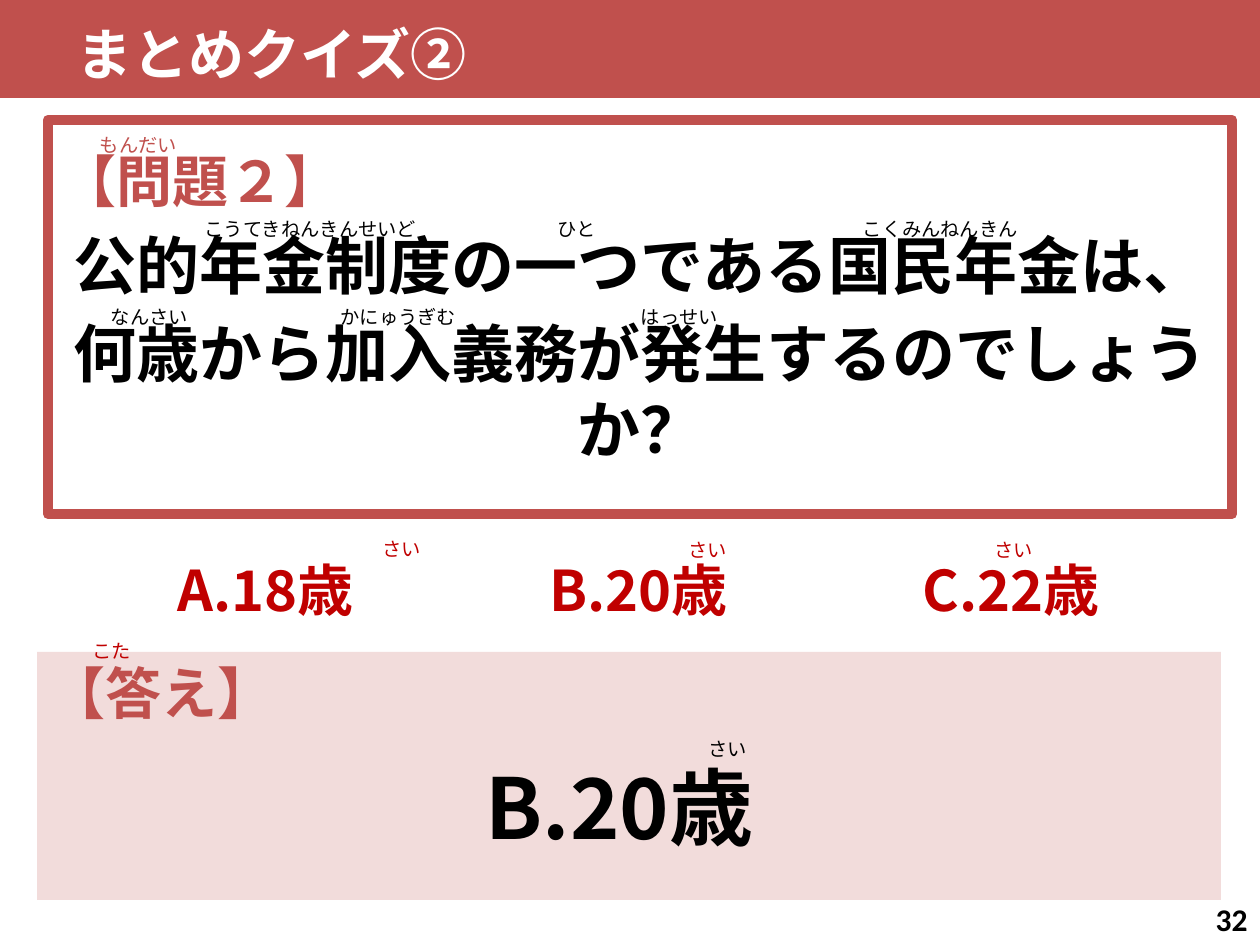
from lxml import etree
from pptx import Presentation
from pptx.dml.color import RGBColor
from pptx.enum.shapes import MSO_SHAPE
from pptx.enum.text import MSO_ANCHOR, PP_ALIGN
from pptx.oxml.ns import qn
from pptx.util import Emu, Pt

PX = 914400 // 126
JP_FONT = "Noto Sans CJK JP"
RED = RGBColor(0xC0, 0x50, 0x4D)
PINK = RGBColor(0xF2, 0xDC, 0xDB)
DARK_RED = RGBColor(0xC0, 0x00, 0x00)
BLACK = RGBColor(0, 0, 0)
WHITE = RGBColor(0xFF, 0xFF, 0xFF)

RUBY_W, RUBY_H = 261, 50
# reading, left, top, colour
RUBIES = [
    ("こうてきねんきんせいど", 180, 204, BLACK),
    ("ひと", 446, 204, BLACK),
    ("こくみんねんきん", 810, 204, BLACK),
    ("なんさい", 19, 292, BLACK),
    ("かにゅうぎむ", 268, 292, BLACK),
    ("はっせい", 549, 292, BLACK),
    ("さい", 271, 524, DARK_RED),
    ("さい", 577, 525, DARK_RED),
    ("さい", 883, 525, DARK_RED),
    ("こた", -19, 626, DARK_RED),
    ("さい", 597, 724, BLACK),
]
ANSWER_TABS = [216, 589, 962]


def px(*lengths):
    return [Emu(n * PX) for n in lengths]


def write(p, text, size=32, color=BLACK, bold=True, font=JP_FONT,
          align=PP_ALIGN.LEFT, before=0):
    """Fill one paragraph with one formatted run."""
    p.alignment = align
    p.space_before = Pt(before)
    r = p.add_run()
    r.text = text
    r.font.size = Pt(size)
    r.font.bold = bold
    r.font.name = font
    r.font.color.rgb = color
    etree.SubElement(r._r.get_or_add_rPr(), qn("a:ea"), typeface=font)


def add_panel(s, box, fill, line=None, width=6):
    sp = s.shapes.add_shape(MSO_SHAPE.RECTANGLE, *px(*box))
    sp.shadow.inherit = False
    sp.fill.solid()
    sp.fill.fore_color.rgb = fill
    if line is None:
        sp.line.fill.background()
    else:
        sp.line.color.rgb = line
        sp.line.width = Pt(width)
    sp.text_frame.vertical_anchor = MSO_ANCHOR.TOP
    return sp.text_frame


def add_label(s, box, text, anchor=MSO_ANCHOR.MIDDLE, **fmt):
    tf = s.shapes.add_textbox(*px(*box)).text_frame
    tf.word_wrap = True
    tf.vertical_anchor = anchor
    write(tf.paragraphs[0], text, **fmt)
    return tf


def add_ruby(s, text, left, top, color, width=RUBY_W):
    add_label(s, (left, top, width, RUBY_H), text, size=11, color=color,
              bold=False, align=PP_ALIGN.CENTER)


def add_center_tabs(p, stops):
    tabs = etree.SubElement(p._p.get_or_add_pPr(), qn("a:tabLst"))
    for stop in stops:
        etree.SubElement(tabs, qn("a:tab"), pos=str(stop * PX), algn="ctr")


def main():
    prs = Presentation()
    prs.slide_width, prs.slide_height = px(1260, 945)
    s = prs.slides.add_slide(prs.slide_layouts[6])

    # Title band
    add_panel(s, (0, 0, 1260, 98), RED)
    add_label(s, (64, 4, 731, 99), "まとめクイズ②", color=WHITE)

    # Answer panel
    tf = add_panel(s, (37, 652, 1184, 248), PINK)
    write(tf.paragraphs[0], "【答え】", color=RED)
    write(tf.add_paragraph(), "B.20歳 ", size=48, align=PP_ALIGN.CENTER,
          before=17)

    # Question panel
    tf = add_panel(s, (48, 120, 1184, 394), WHITE, line=RED)
    tf.margin_top = px(27)[0]
    write(tf.paragraphs[0], "【問題２】", color=RED)
    for text in ("公的年金制度の一つである国民年金は、",
                 "何歳から加入義務が発生するのでしょうか？"):
        write(tf.add_paragraph(), text, size=36, align=PP_ALIGN.CENTER,
              before=7.2)

    # Choices, each centred on a tab stop
    tf = add_label(s, (37, 549, 1206, 81), "\tA.18歳\tB.20歳\tC.22歳",
                   anchor=MSO_ANCHOR.TOP, color=DARK_RED)
    add_center_tabs(tf.paragraphs[0], ANSWER_TABS)

    # Page number
    add_label(s, (976, 894, 284, 50), "32", size=18, font="Calibri",
              align=PP_ALIGN.RIGHT)

    # Readings above the kanji
    add_ruby(s, "もんだい", 48, 120, RED, width=181)
    for ruby in RUBIES:
        add_ruby(s, *ruby)

    prs.save("out.pptx")


if __name__ == "__main__":
    main()
